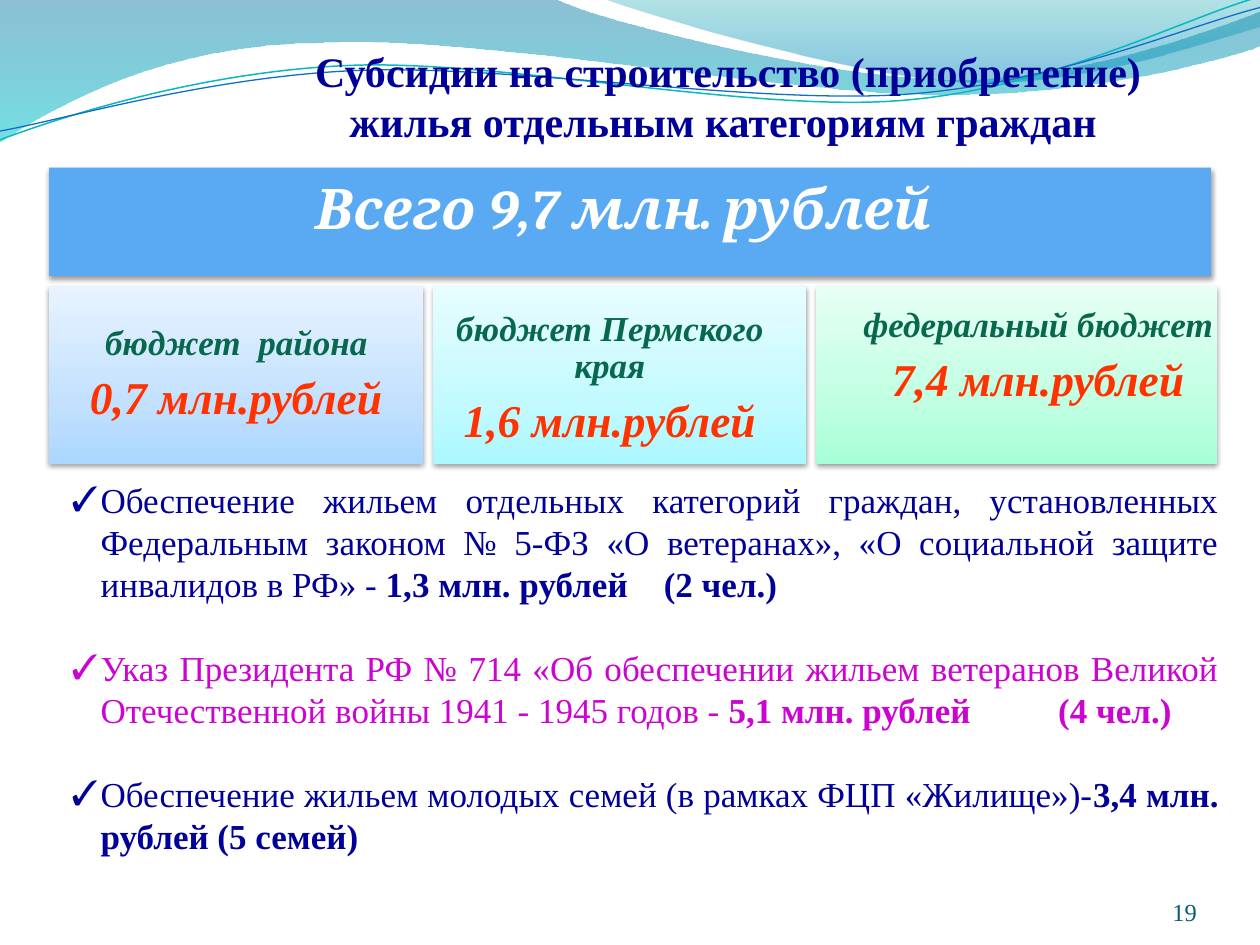
from lxml.etree import SubElement
from pptx import Presentation
from pptx.dml.color import RGBColor
from pptx.enum.shapes import MSO_SHAPE
from pptx.enum.text import MSO_ANCHOR, PP_ALIGN
from pptx.oxml.ns import qn
from pptx.util import Inches, Pt

NAVY = RGBColor(0x00, 0x00, 0x99)
MAGENTA = RGBColor(0xCC, 0x04, 0xD1)
GREEN = RGBColor(0x08, 0x68, 0x4E)
RED = RGBColor(0xFF, 0x33, 0x00)
WHITE = RGBColor(0xFF, 0xFF, 0xFF)
BLACK = RGBColor(0x00, 0x00, 0x00)
TEAL = RGBColor(0x04, 0x5D, 0x75)
BANNER_BLUE = RGBColor(0x59, 0xAA, 0xF2)
LINE_TEAL = RGBColor(0x0A, 0xB8, 0xBF)
LINE_BLUE = RGBColor(0x0F, 0x6F, 0xC6)

# Gradient stops: position, colour, opacity (all in percent)
WAVE_BACK = [(0, RGBColor(0x00, 0x74, 0xA1), 45), (100, RGBColor(0x00, 0xC6, 0xCF), 55)]
WAVE_FRONT = [(0, RGBColor(0x00, 0xA1, 0xA9), 30), (80, RGBColor(0x00, 0x8B, 0xBF), 45)]
CARD_BLUE = [(0, RGBColor(0xAB, 0xD6, 0xFF), 100), (35, RGBColor(0xC3, 0xE1, 0xFF), 100),
             (100, RGBColor(0xE8, 0xF3, 0xFF), 100)]
CARD_CYAN = [(0, RGBColor(0xAB, 0xF8, 0xFF), 100), (35, RGBColor(0xC3, 0xFA, 0xFF), 100),
             (100, RGBColor(0xE8, 0xFD, 0xFF), 100)]
CARD_GREEN = [(0, RGBColor(0xA6, 0xFF, 0xD7), 100), (35, RGBColor(0xC0, 0xFF, 0xE2), 100),
              (100, RGBColor(0xE7, 0xFF, 0xF4), 100)]
UNITS = 1000  # freeform units per inch


def add_color(parent, color, opacity):
    element = SubElement(parent, qn("a:srgbClr"), val=str(color))
    SubElement(element, qn("a:alpha"), val=str(opacity * 1000))


class SlideWriter:
    font = "Times New Roman"

    def __init__(self, slide):
        self.shapes = slide.shapes

    def gradient(self, shape, stops, angle):
        shape.fill.gradient()
        fill = shape._element.spPr.find(qn("a:gradFill"))
        for child in list(fill):
            fill.remove(child)
        stop_list = SubElement(fill, qn("a:gsLst"))
        for position, color, opacity in stops:
            stop = SubElement(stop_list, qn("a:gs"), pos=str(position * 1000))
            add_color(stop, color, opacity)
        SubElement(fill, qn("a:lin"), ang=str(angle * 60000), scaled="0")

    def outline(self, start, segments, closed):
        """Segments are straight (2 numbers) or cubic (6 numbers), in inches."""
        points = [[round(v * UNITS) for v in point]
                  for point in [start, *(segment[-2:] for segment in segments)]]
        left, top = (min(values) for values in zip(*points))
        builder = self.shapes.build_freeform(*points[0], scale=Inches(1) / UNITS)
        builder.add_line_segments(points[1:], close=closed)
        shape = builder.convert_to_shape()
        shape.shadow.inherit = False
        # Turn the cubic segments into Bezier curves
        outline = next(shape._element.iter(qn("a:path")))
        for line, segment in zip(outline.findall(qn("a:lnTo")), segments):
            if len(segment) == 6:
                cubic = SubElement(outline, qn("a:cubicBezTo"))
                for x, y in zip(segment[::2], segment[1::2]):
                    SubElement(cubic, qn("a:pt"), x=str(round(x * UNITS) - left),
                               y=str(round(y * UNITS) - top))
                outline.replace(line, cubic)
        return shape

    def wave(self, stops, start, *segments):
        shape = self.outline(start, segments, True)
        self.gradient(shape, stops, 90)
        shape.line.fill.background()

    def curve(self, color, width, start, *segments):
        shape = self.outline(start, segments, False)
        shape.fill.background()
        shape.line.color.rgb = color
        shape.line.width = Pt(width)

    def panel(self, area, color=None, stops=None):
        shape = self.shapes.add_shape(MSO_SHAPE.RECTANGLE, *map(Inches, area))
        if stops:
            self.gradient(shape, stops, 270)
        else:
            shape.fill.solid()
            shape.fill.fore_color.rgb = color
        shape.line.fill.background()
        shape.shadow.inherit = False
        effects = shape._element.spPr.find(qn("a:effectLst"))
        shadow = SubElement(effects, qn("a:outerShdw"), blurRad=str(Pt(3.1)),
                            dist=str(Pt(1.6)), dir="5400000", rotWithShape="0")
        add_color(shadow, BLACK, 38)

    def text_box(self, area, margins=(0.1, 0.05), anchor=MSO_ANCHOR.TOP):
        frame = self.shapes.add_textbox(*map(Inches, area)).text_frame
        frame.word_wrap = True
        frame.vertical_anchor = anchor
        frame.margin_left = frame.margin_right = Inches(margins[0])
        frame.margin_top = frame.margin_bottom = Inches(margins[1])
        return frame

    def paragraph(self, frame, spans, **layout):
        first = frame.paragraphs[0]
        para = frame.add_paragraph() if first.runs else first
        for name, value in layout.items():
            setattr(para, name, value)
        for text, style in spans:
            span = para.add_run()
            span.text = text
            for name, value in ({"name": self.font} | style).items():
                if name == "color":
                    span.font.color.rgb = value
                else:
                    setattr(span.font, name, value)
        return para

    def centered(self, frame, text, size, color, **style):
        style = {"size": Pt(size), "color": color, "bold": True, "italic": True} | style
        self.paragraph(frame, [(text, style)], alignment=PP_ALIGN.CENTER,
                       line_spacing=0.9, space_after=Pt(round(size * 0.35, 1)))

    def bullet(self, frame, text, amount, color, tab=None):
        style = {"size": Pt(20), "color": color}
        layout = {"space_before": Pt(24)} if frame.paragraphs[0].runs else {}
        para = self.paragraph(frame, [(text, style), (amount, style | {"bold": True})],
                              alignment=PP_ALIGN.JUSTIFY, **layout)
        properties = para._p.get_or_add_pPr()
        properties.set("marL", str(Inches(0.23)))
        properties.set("indent", str(Inches(-0.23)))
        SubElement(properties, qn("a:buFont"), typeface=self.font)
        SubElement(properties, qn("a:buChar"), char="✓")
        if tab:
            tabs = SubElement(properties, qn("a:tabLst"))
            SubElement(tabs, qn("a:tab"), pos=str(Inches(tab)), algn="l")


def main():
    deck = Presentation()
    deck.slide_width, deck.slide_height = Inches(10), Inches(7.5)
    page = SlideWriter(deck.slides.add_slide(deck.slide_layouts[6]))

    # Waves along the top
    page.wave(WAVE_BACK, (0, -0.01), (4.4, -0.01), (4.76, 0.17, 6.64, 0.63, 7.58, 0.63),
              (8.53, 0.63, 9.58, 0.26, 10, 0.09), (10.01, 0.36),
              (9.83, 0.44, 8.7, 0.76, 7.46, 0.75), (6.22, 0.75, 3.82, 0.28, 2.57, 0.34),
              (1.29, 0.35, 0.46, 0.83, -0.01, 1.13), (0, -0.01))
    page.wave(WAVE_FRONT, (4.79, -0.01), (5.09, 0.11, 6.82, 0.62, 7.69, 0.65),
              (8.56, 0.69, 9.61, 0.32, 10, 0.21), (10, 0), (4.79, -0.01))
    page.curve(LINE_TEAL, 0.85, (0, 1.11), (0.48, 0.93, 1.58, 0.57, 2.77, 0.52),
               (3.95, 0.47, 5.93, 0.89, 7.13, 0.8), (8.33, 0.71, 9.38, 0.15, 9.98, -0.02))
    page.curve(LINE_BLUE, 0.75, (0, 1.04), (0.47, 0.96, 1.64, 0.61, 2.83, 0.56),
               (4.03, 0.51, 5.97, 0.83, 7.17, 0.75), (8.36, 0.67, 9.41, 0.21, 10, 0.06))

    # Slide number
    number = page.text_box((8.67, 6.95, 0.83, 0.4), (0, 0), MSO_ANCHOR.BOTTOM)
    page.paragraph(number, [("19", {"size": Pt(14), "color": TEAL})], alignment=PP_ALIGN.RIGHT)

    # Total banner
    page.panel((0.39, 1.33, 9.22, 0.86), color=BANNER_BLUE)
    total = page.text_box((0.39, 1.33, 9.22, 0.7), (0.13, 0.13), MSO_ANCHOR.MIDDLE)
    page.centered(total, "Всего 9,7 млн. рублей ", 32, WHITE, name="Cambria")

    # Budget cards: left, width, fill, text area, source, amount
    cards = [
        (0.39, 2.97, CARD_BLUE, (0.39, 2.27, 2.97, 1.41), "бюджет  района", "0,7 млн.рублей"),
        (3.44, 2.96, CARD_CYAN, (3.28, 2.27, 3.12, 1.48), "бюджет Пермского края",
         "1,6 млн.рублей"),
        (6.48, 3.18, CARD_GREEN, (6.48, 2.11, 3.52, 1.44), "федеральный бюджет",
         "7,4 млн.рублей"),
    ]
    for left, width, stops, text_area, source, amount in cards:
        page.panel((left, 2.27, width, 1.41), stops=stops)
        box = page.text_box(text_area, (0.08, 0.08), MSO_ANCHOR.MIDDLE)
        page.centered(box, source, 20, GREEN)
        page.centered(box, amount, 26, RED)

    # Programme list
    programmes = page.text_box((0.47, 3.75, 9.3, 3.43))
    page.bullet(programmes, "Обеспечение жильем отдельных категорий граждан, установленных "
                "Федеральным законом № 5-ФЗ «О ветеранах», «О социальной защите инвалидов "
                "в РФ» - ", "1,3 млн. рублей\t(2 чел.)", NAVY, tab=4.7)
    page.bullet(programmes, "Указ Президента РФ № 714 «Об обеспечении жильем ветеранов Великой "
                "Отечественной войны 1941 - 1945 годов - ",
                "5,1 млн. рублей\t(4 чел.)", MAGENTA, tab=7.83)
    page.bullet(programmes, "Обеспечение жильем молодых семей (в рамках ФЦП «Жилище»)-",
                "3,4 млн. рублей (5 семей)", NAVY)

    # Title
    title = page.text_box((2.03, 0.31, 7.5, 0.91))
    page.paragraph(title, [("Субсидии на строительство (приобретение) жилья отдельным "
                            "категориям граждан ",
                            {"size": Pt(24), "color": NAVY, "bold": True})],
                   alignment=PP_ALIGN.CENTER)

    deck.save("out.pptx")


if __name__ == "__main__":
    main()
